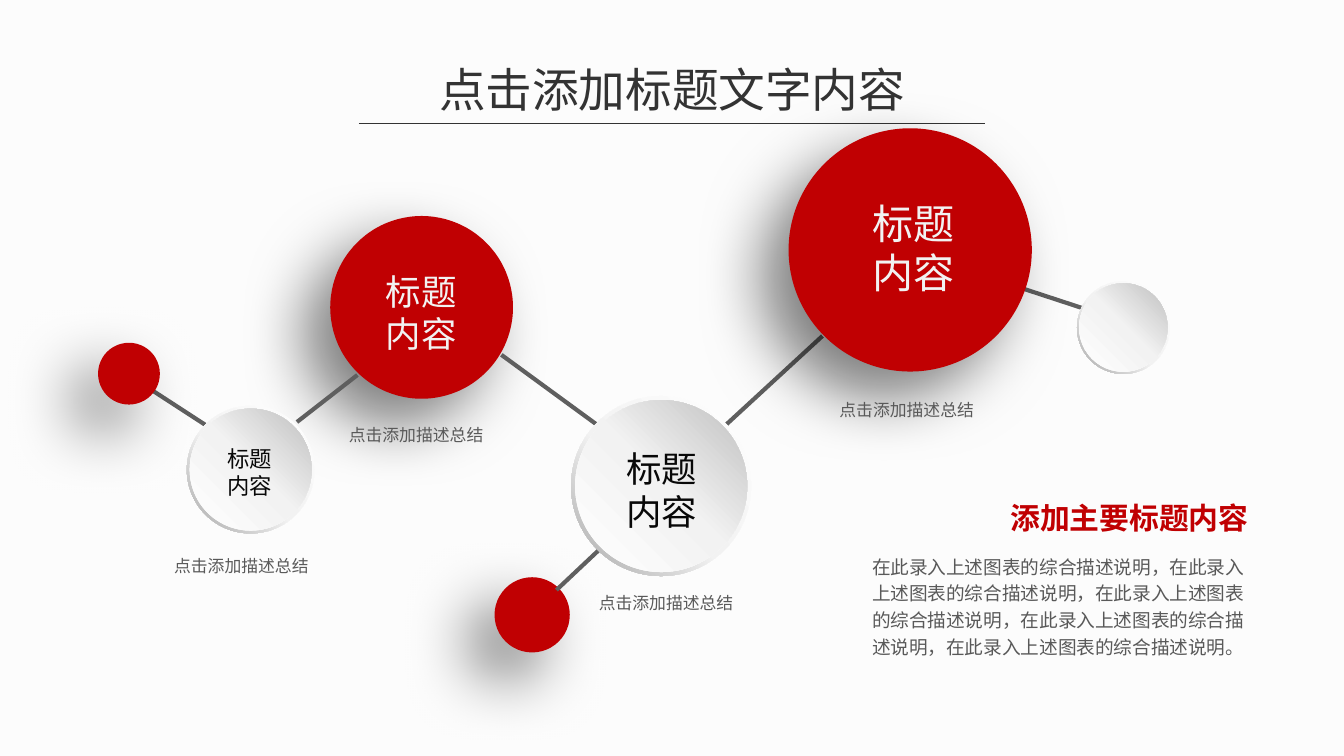
from typing import NamedTuple

import pptx
import pptx.dml.color
import pptx.enum.dml
import pptx.enum.shapes
import pptx.enum.text
import pptx.oxml
import pptx.oxml.ns
import pptx.util

Pt = pptx.util.Pt
RGBColor = pptx.dml.color.RGBColor
SHAPE = pptx.enum.shapes.MSO_SHAPE
ALIGN = pptx.enum.text.PP_ALIGN
qn = pptx.oxml.ns.qn

FONT = "Noto Sans CJK SC"
NS = 'xmlns:a="http://schemas.openxmlformats.org/drawingml/2006/main"'
PAPER = RGBColor(0xFC, 0xFC, 0xFC)
RED = RGBColor(0xC0, 0x00, 0x02)
INK = RGBColor(0x33, 0x33, 0x33)
LINK = RGBColor(0x5F, 0x5F, 0x5F)
GREY = RGBColor(0x59, 0x59, 0x59)
BLACK = RGBColor(0x08, 0x08, 0x08)
LIGHT = RGBColor(0xF2, 0xF2, 0xF2)

RIM_STOPS = ((0, "FFFFFF"), (55, "F2F2F2"), (100, "A6A6A6"))
FACE_STOPS = ((0, "FFFFFF"), (51, "F2F2F2"), (100, "BFBFBF"))


class Ball(NamedTuple):
    x: float  # centre
    y: float
    d: float


class Link(NamedTuple):
    x1: float
    y1: float
    x2: float
    y2: float
    color: RGBColor = LINK
    width: float = 2.25


class Text(NamedTuple):
    x: float
    y: float
    w: float
    h: float
    lines: tuple[str, ...]
    size: float
    color: RGBColor
    align: ALIGN = ALIGN.CENTER
    spacing: float | pptx.util.Length | None = None
    inset: tuple[float, float] = (7.2, 3.6)
    bold: bool = False
    wrap: bool = True


def ball_label(x: float, y: float, size: float, color: RGBColor) -> Text:
    """Two-line label centred on x, y."""
    w, h = 2 * size + 14.4, 2.44 * size + 7.2
    return Text(x - w / 2, y - h / 2, w, h, ("标题", "内容"), size, color, wrap=False)


def caption(x: float, y: float) -> Text:
    return Text(x, y, 107.3, 20.2, ("点击添加描述总结",), 9, GREY,
                spacing=Pt(13.5), inset=(5.8, 2.9))


TITLE = Text(226.8, 28.8, 266.4, 37.4, ("点击添加标题文字内容",), 25, INK)
TITLE_RULE = Link(192.2, 66.2, 527.8, 66.2, INK, 0.75)
BACK_LINKS = [Link(544.3, 153.4, 588.2, 167.8), Link(387.4, 229, 440.6, 180)]
RED_BALLS = [Ball(487.6, 133.9, 130.3), Ball(285.1, 329.4, 40.3), Ball(225.9, 164.7, 97.9)]
FRONT_LINKS = [
    Link(159.1, 226.1, 191.5, 200.9),
    Link(268.6, 190.1, 321.8, 229),
    Link(82.1, 209.5, 110.9, 228.2),
    Link(298.1, 316.1, 321.8, 293.8),
]
WHITE_BALLS = [Ball(601.8, 175.5, 49.7), Ball(354.2, 260.4, 96.5), Ball(134.3, 251.6, 68.4)]
END_BALL = Ball(69.1, 200.2, 33.1)
TEXTS = [
    ball_label(489.6, 133.2, 22, LIGHT),
    ball_label(354.6, 262.8, 19, BLACK),
    ball_label(225.7, 167.8, 19, LIGHT),
    ball_label(133.9, 253.4, 12, BLACK),
    caption(75.6, 292.3),
    caption(169.2, 221.8),
    caption(303.1, 311.8),
    caption(432, 208.8),
    Text(492.5, 264.2, 182.9, 25.9, ("添加主要标题内容",), 16, RED, ALIGN.RIGHT,
         inset=(6.5, 3.6), bold=True),
    Text(462.2, 292.3, 216, 63.4,
         ("，".join(["在此录入上述图表的综合描述说明"] * 5) + "。",), 10, GREY, ALIGN.LEFT,
         spacing=1.2, inset=(5, 2.9)),
]


def add_round(shapes, kind: SHAPE, ball: Ball, scale: float = 1):
    d = ball.d * scale
    sp = shapes.add_shape(kind, Pt(ball.x - d / 2), Pt(ball.y - d / 2), Pt(d), Pt(d))
    sp.shadow.inherit = False
    sp.line.fill.background()
    return sp


def set_gradient(sp, stops: tuple, angle: float) -> None:
    """Three-stop linear gradient; angle runs counter-clockwise."""
    sp.fill.gradient()
    sp.fill.gradient_angle = angle
    old = sp._element.spPr.find(qn("a:gradFill")).find(qn("a:gsLst"))
    items = "".join(f'<a:gs pos="{pos * 1000}"><a:srgbClr val="{rgb}"/></a:gs>'
                    for pos, rgb in stops)
    old.getparent().replace(old, pptx.oxml.parse_xml(f"<a:gsLst {NS}>{items}</a:gsLst>"))


def add_red_ball(shapes, ball: Ball) -> None:
    group = shapes.add_group_shape()
    for scale in (1, 0.95):
        sp = add_round(group.shapes, SHAPE.OVAL, ball, scale)
        sp.fill.solid()
        sp.fill.fore_color.rgb = RED
        if scale == 1:
            sp._element.spPr.find(qn("a:effectLst")).append(pptx.oxml.parse_xml(
                f'<a:outerShdw {NS} blurRad="{Pt(35)}" dist="{Pt(20)}" dir="8100000" '
                'algn="tr" rotWithShape="0"><a:srgbClr val="000000">'
                '<a:alpha val="50000"/></a:srgbClr></a:outerShdw>'))


def add_white_ball(shapes, ball: Ball) -> None:
    group = shapes.add_group_shape()
    rim = add_round(group.shapes, SHAPE.DONUT, ball)
    rim.adjustments[0] = 0.049
    set_gradient(rim, RIM_STOPS, 225)
    face = add_round(group.shapes, SHAPE.OVAL, ball, 0.955)
    set_gradient(face, FACE_STOPS, 45)


def add_link(shapes, link: Link) -> None:
    cx = shapes.add_connector(pptx.enum.shapes.MSO_CONNECTOR.STRAIGHT,
                              Pt(link.x1), Pt(link.y1), Pt(link.x2), Pt(link.y2))
    cx.line.color.rgb = link.color
    cx.line.width = Pt(link.width)
    cx._element.spPr.append(pptx.oxml.parse_xml(f"<a:effectLst {NS}/>"))


def add_text(shapes, text: Text) -> None:
    tf = shapes.add_textbox(Pt(text.x), Pt(text.y), Pt(text.w), Pt(text.h)).text_frame
    tf.word_wrap = text.wrap
    tf.auto_size = pptx.enum.text.MSO_AUTO_SIZE.SHAPE_TO_FIT_TEXT
    tf.margin_left = tf.margin_right = Pt(text.inset[0])
    tf.margin_top = tf.margin_bottom = Pt(text.inset[1])
    for i, line in enumerate(text.lines):
        p = tf.add_paragraph() if i else tf.paragraphs[0]
        p.alignment = text.align
        p.line_spacing = text.spacing
        r = p.add_run()
        r.text = line
        r.font.size = Pt(text.size)
        r.font.bold = text.bold
        r.font.color.rgb = text.color
        r.font.name = FONT
        r._r.get_or_add_rPr().append(
            pptx.oxml.parse_xml(f'<a:ea {NS} typeface="{FONT}"/>'))


def main() -> None:
    prs = pptx.Presentation()
    prs.slide_width, prs.slide_height = Pt(720), Pt(405)
    s = prs.slides.add_slide(prs.slide_layouts[6])
    s.background.fill.solid()
    s.background.fill.fore_color.rgb = PAPER

    add_text(s.shapes, TITLE)
    for link in [TITLE_RULE, *BACK_LINKS]:
        add_link(s.shapes, link)
    for ball in RED_BALLS:
        add_red_ball(s.shapes, ball)
    for link in FRONT_LINKS:
        add_link(s.shapes, link)
    for ball in WHITE_BALLS:
        add_white_ball(s.shapes, ball)
    for text in TEXTS:
        add_text(s.shapes, text)
    add_red_ball(s.shapes, END_BALL)
    prs.save("out.pptx")


if __name__ == "__main__":
    main()
